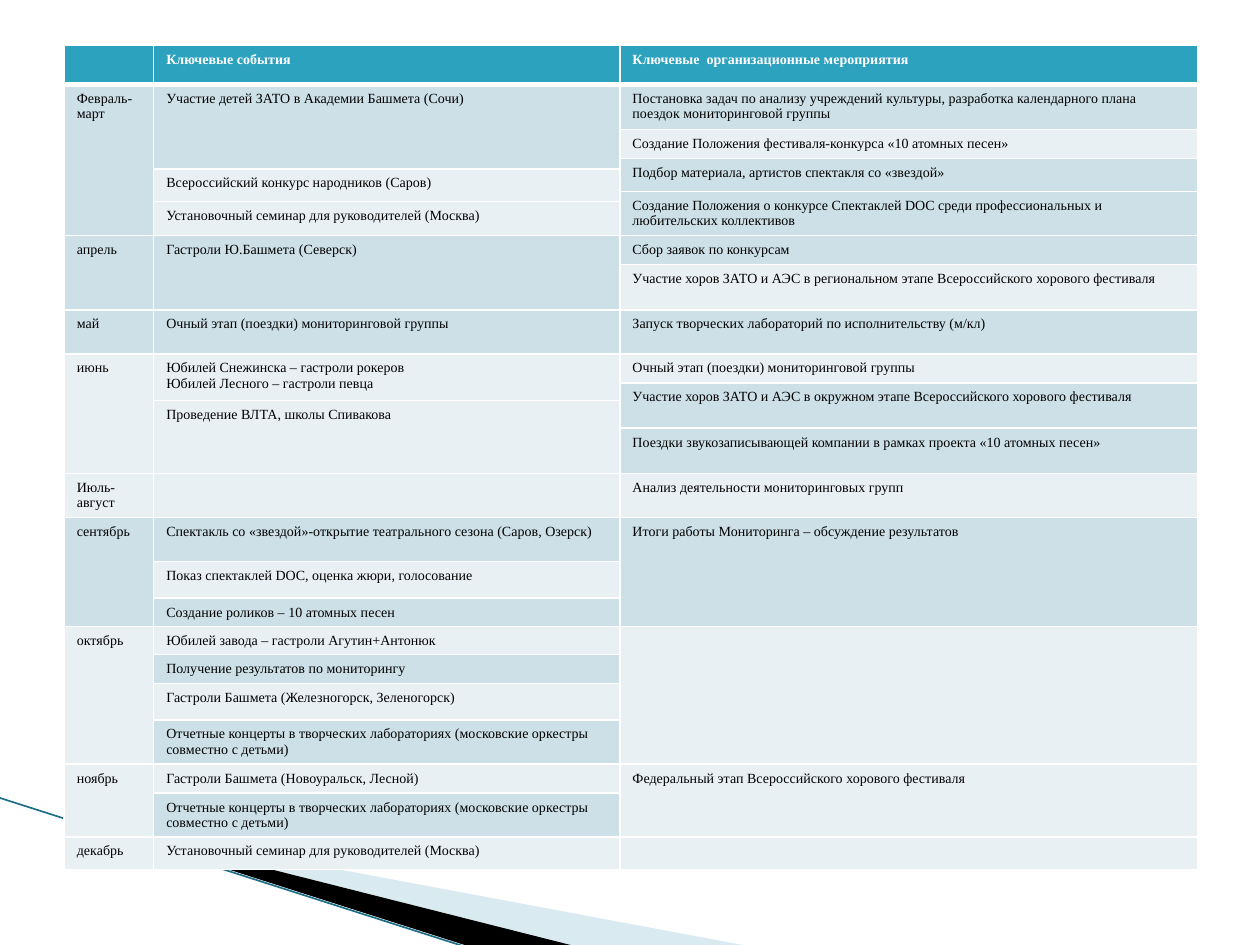
from lxml import etree
from pptx import Presentation
from pptx.dml.color import RGBColor
from pptx.enum.shapes import MSO_CONNECTOR
from pptx.oxml import parse_xml
from pptx.oxml.ns import nsdecls, qn
from pptx.util import Inches, Pt

WHITE = RGBColor(0xFF, 0xFF, 0xFF)
BLACK = RGBColor(0, 0, 0)
HEADER = RGBColor(0x2D, 0xA2, 0xBF)
DARK = RGBColor(0xCD, 0xE0, 0xE8)
LIGHT = RGBColor(0xE8, 0xF0, 0xF4)
PALE_BLUE = RGBColor(0xA0, 0xCB, 0xDC)
TEAL = RGBColor(0x1D, 0x6F, 0x87)
FONT = "Times New Roman"

COL_WIDTHS = [0.71, 3.7, 4.59]
ROW_HEIGHTS = [0.31, 0.36, 0.23, 0.08, 0.18, 0.08, 0.27, 0.23, 0.36, 0.35,
               0.23, 0.14, 0.22, 0.36, 0.35, 0.35, 0.29, 0.22, 0.22, 0.23,
               0.29, 0.35, 0.23, 0.34, 0.26]

CONCERTS = ("Отчетные концерты в творческих лабораториях "
            "(московские оркестры совместно с детьми)")
SEMINAR = "Установочный семинар для руководителей (Москва)"
FIELD_STAGE = "Очный этап (поездки) мониторинговой группы"

# Each column from top to bottom: text, rows spanned, fill
MONTHS = [
    ("", 1, HEADER),
    ("Февраль- март", 6, DARK),
    ("апрель", 2, DARK),
    ("май", 1, DARK),
    ("июнь", 4, LIGHT),
    ("Июль-август", 1, LIGHT),
    ("сентябрь", 3, DARK),
    ("октябрь", 4, LIGHT),
    ("ноябрь", 2, LIGHT),
    ("декабрь", 1, LIGHT),
]
EVENTS = [
    ("Ключевые события", 1, HEADER),
    ("Участие детей ЗАТО в Академии Башмета (Сочи)", 3, DARK),
    ("Всероссийский конкурс народников (Саров)", 2, LIGHT),
    (SEMINAR, 1, LIGHT),
    ("Гастроли Ю.Башмета (Северск)", 2, DARK),
    (FIELD_STAGE, 1, DARK),
    ("Юбилей Снежинска – гастроли рокеров\nЮбилей Лесного – гастроли певца", 2, LIGHT),
    ("Проведение ВЛТА, школы Спивакова", 2, LIGHT),
    ("", 1, LIGHT),
    ("Спектакль со «звездой»-открытие театрального сезона (Саров, Озерск)", 1, DARK),
    ("Показ спектаклей DOC, оценка жюри, голосование", 1, LIGHT),
    ("Создание роликов – 10 атомных песен", 1, DARK),
    ("Юбилей завода – гастроли Агутин+Антонюк", 1, LIGHT),
    ("Получение результатов по мониторингу", 1, DARK),
    ("Гастроли Башмета (Железногорск, Зеленогорск)", 1, LIGHT),
    (CONCERTS, 1, DARK),
    ("Гастроли Башмета (Новоуральск, Лесной)", 1, LIGHT),
    (CONCERTS, 1, DARK),
    (SEMINAR, 1, LIGHT),
]
ACTIVITIES = [
    ("Ключевые  организационные мероприятия", 1, HEADER),
    ("Постановка задач по анализу учреждений культуры, разработка "
     "календарного плана поездок мониторинговой группы", 1, DARK),
    ("Создание Положения фестиваля-конкурса «10 атомных песен»", 1, LIGHT),
    ("Подбор материала, артистов спектакля со «звездой»", 2, DARK),
    ("Создание Положения о конкурсе Спектаклей DOC среди "
     "профессиональных и любительских коллективов", 2, DARK),
    ("Сбор заявок по конкурсам", 1, DARK),
    ("Участие хоров ЗАТО и АЭС в региональном этапе "
     "Всероссийского хорового фестиваля", 1, LIGHT),
    ("Запуск творческих лабораторий по исполнительству (м/кл)", 1, DARK),
    (FIELD_STAGE, 1, LIGHT),
    ("Участие хоров ЗАТО и АЭС в окружном этапе "
     "Всероссийского хорового фестиваля", 2, DARK),
    ("Поездки звукозаписывающей компании в рамках проекта "
     "«10 атомных песен»", 1, DARK),
    ("Анализ деятельности мониторинговых групп", 1, LIGHT),
    ("Итоги работы Мониторинга – обсуждение результатов", 3, DARK),
    ("", 4, LIGHT),
    ("Федеральный этап Всероссийского хорового фестиваля", 2, LIGHT),
    ("", 1, LIGHT),
]


def add_wedge(s, points, color, alpha=100):
    corners = [(Inches(x), Inches(y)) for x, y in points]
    builder = s.shapes.build_freeform(*corners[0], scale=1.0)
    builder.add_line_segments(corners[1:], close=True)
    sp = builder.convert_to_shape()
    sp.shadow.inherit = False
    sp.fill.solid()
    sp.fill.fore_color.rgb = color
    sp.line.fill.background()
    if alpha < 100:
        clr = sp.fill._xPr.find(qn("a:solidFill"))[0]
        etree.SubElement(clr, qn("a:alpha")).set("val", str(alpha * 1000))


def add_corner_decoration(s):
    add_wedge(s, [(0.55, 6.5), (5.95, 7.51), (4.56, 7.51)], PALE_BLUE, 40)
    add_wedge(s, [(0.53, 6.49), (4.57, 7.51), (3.72, 7.51)], BLACK)
    line = s.shapes.add_connector(MSO_CONNECTOR.STRAIGHT, Inches(-0.01),
                                  Inches(6.33), Inches(3.71), Inches(7.52))
    line.line.color.rgb = TEAL
    line.line.width = Pt(0.95)
    etree.SubElement(line._element.spPr, qn("a:effectLst"))


def format_cell(cell, row, color):
    tcPr = cell._tc.get_or_add_tcPr()
    thick = {(0, "B"), (1, "T")}
    for side in "LRTB":
        width = Pt(3 if (row, side) in thick else 1)
        tcPr.append(parse_xml(
            f'<a:ln{side} {nsdecls("a")} w="{width}"><a:solidFill>'
            f'<a:srgbClr val="{WHITE}"/></a:solidFill></a:ln{side}>'))
    cell.fill.solid()
    cell.fill.fore_color.rgb = color
    for p in cell.text_frame.paragraphs:
        p.font.size = Pt(8)
        p.font.name = FONT
        p.font.bold = row == 0
        p.font.color.rgb = WHITE if row == 0 else BLACK
        if not p.runs:  # keeps rows with empty cells low
            etree.SubElement(p._p, qn("a:endParaRPr")).set("sz", "800")


def add_schedule(s, left, top, width, height):
    columns = [MONTHS, EVENTS, ACTIVITIES]
    table = s.shapes.add_table(len(ROW_HEIGHTS), len(columns),
                               left, top, width, height).table
    for column, w in zip(table.columns, COL_WIDTHS):
        column.width = Inches(w)
    for row, h in zip(table.rows, ROW_HEIGHTS):
        row.height = Inches(h)
    for c, entries in enumerate(columns):
        r = 0
        for text, span, color in entries:
            cell = table.cell(r, c)
            if text:
                cell.text = text
            for k in range(r, r + span):
                format_cell(table.cell(k, c), k, color)
            if span > 1:
                cell.merge(table.cell(r + span - 1, c))
            r += span


def main():
    prs = Presentation()
    prs.slide_width, prs.slide_height = Inches(10), Inches(7.5)
    s = prs.slides.add_slide(prs.slide_layouts[6])
    add_corner_decoration(s)
    add_schedule(s, Inches(0.51), Inches(0.36),
                 Inches(sum(COL_WIDTHS)), Inches(sum(ROW_HEIGHTS)))
    prs.save("out.pptx")


if __name__ == "__main__":
    main()
